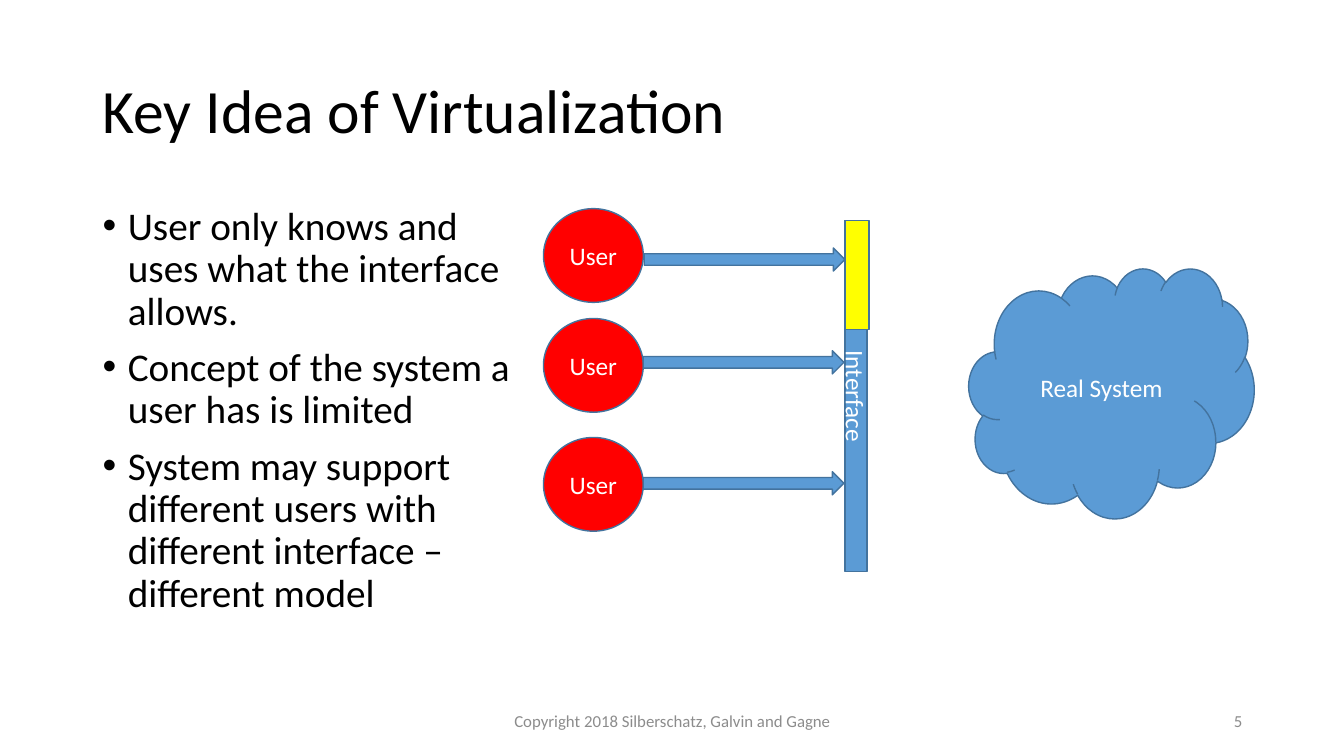
"""Build the slide on the key idea of virtualization."""
import pptx
import pptx.util
import pptx.dml.color
import pptx.enum.shapes
import pptx.enum.text
import pptx.oxml.ns
import lxml.etree

Inches, Pt = pptx.util.Inches, pptx.util.Pt
SHAPE = pptx.enum.shapes.MSO_SHAPE
ALIGN = pptx.enum.text.PP_ALIGN
ANCHOR = pptx.enum.text.MSO_ANCHOR

TITLE = "Key Idea of Virtualization"
BULLETS = [
    "User only knows and uses what the interface allows.",
    "Concept of the system a user has is limited",
    "System may support different users with different interface – different model",
]
FOOTER = "Copyright 2018 Silberschatz, Galvin and Gagne"
PAGE = "5"
USER_LABEL = "User"
INTERFACE_LABEL = "Interface"
SYSTEM_LABEL = "Real System"

USER_TOPS = [2.07, 3.16, 4.34]
ARROW_STARTS = [(6.39, 2.46), (6.38, 3.48), (6.38, 4.68)]
USER_LEFT, USER_SIZE = 5.39, (0.99, 0.93)
ARROW_SIZE = (1.99, 0.23)
INTERFACE_BOX = (8.38, 2.19, 0.22, 3.48)
LIMITED_BOX = (8.38, 2.19, 0.24, 1.08)
SYSTEM_BOX = (9.61, 2.66, 2.83, 2.48)

THEME = {
    "font": "Calibri",
    "text": "000000", "muted": "8C8C8C", "label": "FFFFFF",
    "blue": "5B9BD5", "outline": "43739E", "user": "FF0000", "limited": "FFFF00",
    "title_size": 44, "body_size": 28, "label_size": 18, "footer_size": 12,
}


def rgb(name):
    """Return a theme colour."""
    return pptx.dml.color.RGBColor.from_string(THEME[name])


def write(tf, lines, size, color, align, anchor):
    """Fill a text frame and return its paragraphs."""
    tf.word_wrap = True
    tf.vertical_anchor = anchor
    tf.text = "\n".join(lines)
    for p in tf.paragraphs:
        p.alignment = align
        for r in p.runs:
            r.font.name = THEME["font"]
            r.font.size = Pt(THEME[size])
            r.font.color.rgb = rgb(color)
    return tf.paragraphs


def add_text(s, box, lines, size, color, align=ALIGN.LEFT, anchor=ANCHOR.MIDDLE):
    """Add a text box and return its paragraphs."""
    sp = s.shapes.add_textbox(*map(Inches, box))
    return write(sp.text_frame, lines, size, color, align, anchor)


def add_part(s, kind, box, fill, label=None):
    """Add an outlined diagram shape with an optional label."""
    sp = s.shapes.add_shape(kind, *map(Inches, box))
    sp.shadow.inherit = False
    sp.fill.solid()
    sp.fill.fore_color.rgb = rgb(fill)
    sp.line.color.rgb = rgb("outline")
    sp.line.width = Pt(1)
    if label:
        write(sp.text_frame, [label], "label_size", "label", ALIGN.CENTER, ANCHOR.MIDDLE)
    return sp


def add_bullet(p):
    """Give a paragraph a hanging bullet."""
    pPr = p._p.get_or_add_pPr()
    pPr.set("marL", str(Inches(0.25)))
    pPr.set("indent", str(-Inches(0.25)))
    qn = pptx.oxml.ns.qn
    lxml.etree.SubElement(pPr, qn("a:buFont")).set("typeface", "Arial")
    lxml.etree.SubElement(pPr, qn("a:buChar")).set("char", "•")


def main():
    """Build and save the slide."""
    prs = pptx.Presentation()
    prs.slide_width, prs.slide_height = Inches(13.33), Inches(7.5)
    s = prs.slides.add_slide(prs.slide_layouts[6])

    for p in add_text(s, (0.92, 0.4, 11.5, 1.45), [TITLE], "title_size", "text"):
        p.line_spacing = 0.9
    for p in add_text(s, (0.92, 2, 4.25, 4.76), BULLETS, "body_size", "text",
                      anchor=ANCHOR.TOP):
        p.line_spacing = 0.9
        p.space_before = Pt(10)
        add_bullet(p)
    add_text(s, (4.42, 6.95, 4.5, 0.4), [FOOTER], "footer_size", "muted", ALIGN.CENTER)

    interface = add_part(s, SHAPE.RECTANGLE, INTERFACE_BOX, "blue", INTERFACE_LABEL)
    interface.text_frame._txBody.bodyPr.set("vert", "vert")
    add_part(s, SHAPE.CLOUD, SYSTEM_BOX, "blue", SYSTEM_LABEL)
    for top in USER_TOPS:
        add_part(s, SHAPE.OVAL, (USER_LEFT, top, *USER_SIZE), "user", USER_LABEL)
    for start in ARROW_STARTS:
        add_part(s, SHAPE.RIGHT_ARROW, (*start, *ARROW_SIZE), "blue")
    add_part(s, SHAPE.RECTANGLE, LIMITED_BOX, "limited")

    add_text(s, (9.42, 6.95, 3, 0.4), [PAGE], "footer_size", "muted", ALIGN.RIGHT)
    prs.save("out.pptx")


if __name__ == "__main__":
    main()
